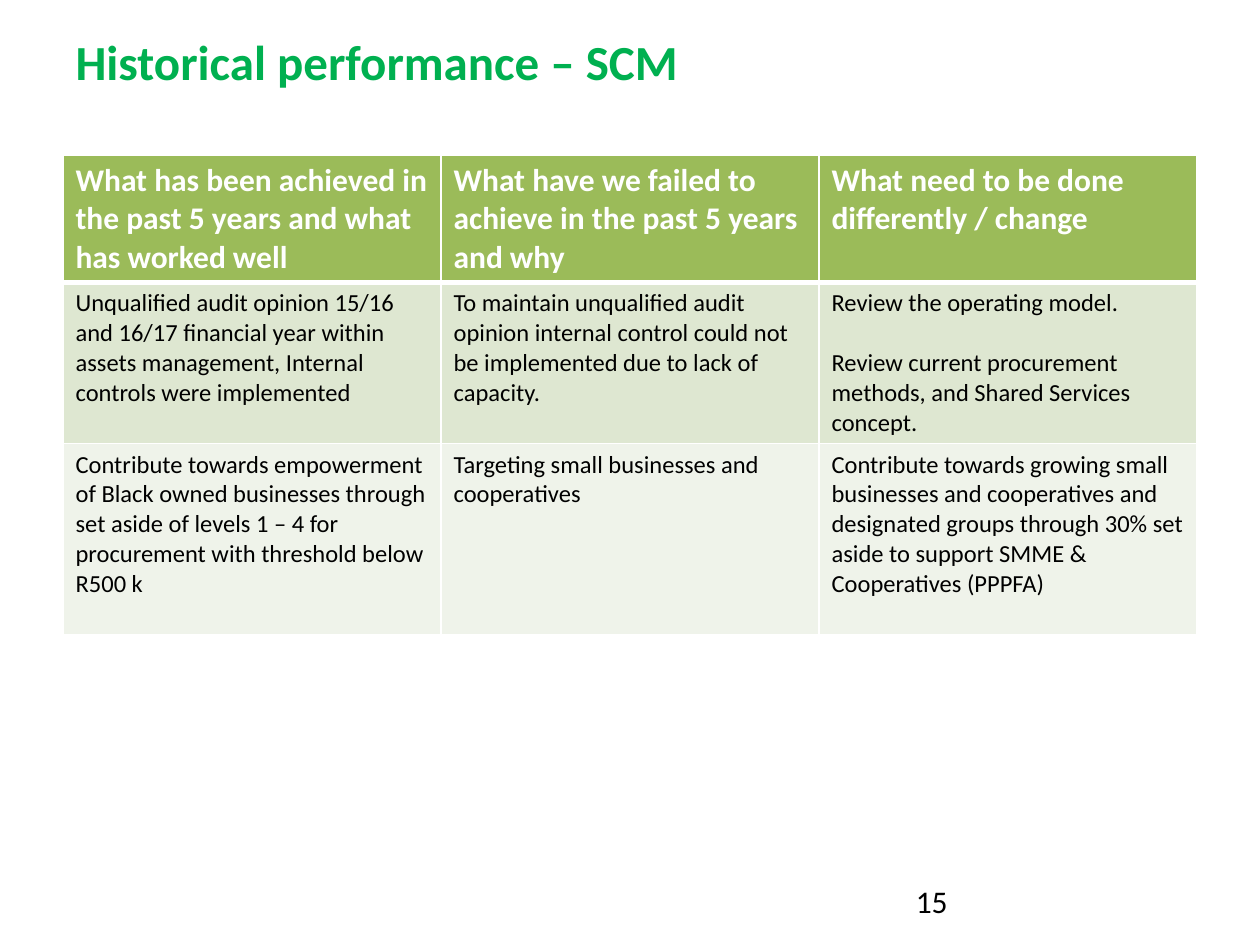
from lxml.etree import SubElement as Sub
from pptx import Presentation
from pptx.dml.color import RGBColor
from pptx.enum.text import MSO_ANCHOR as Anchor, MSO_AUTO_SIZE as Fit, PP_ALIGN as Align
from pptx.oxml.ns import qn
from pptx.util import Inches, Pt

GREEN = RGBColor(0x00, 0xB0, 0x50)
OLIVE = RGBColor(0x9B, 0xBB, 0x59)
SAGE = RGBColor(0xDE, 0xE7, 0xD1)
PALE = RGBColor(0xEF, 0xF3, 0xEA)
WHITE = RGBColor(0xFF, 0xFF, 0xFF)
BLACK = RGBColor(0x00, 0x00, 0x00)

TITLE = dict(size=Pt(28), bold=True, color=GREEN)
HEAD = dict(size=Pt(18), bold=True, color=WHITE)
BODY = dict(size=Pt(14), bold=False, color=BLACK)
PAGE = dict(size=Pt(18), bold=False, color=BLACK)

ROWS = [
    (1.01, OLIVE, HEAD, [
        "What has been achieved in the past 5 years and what has worked well",
        "What have we failed to achieve in the past 5 years and why",
        "What need to be done differently / change"]),
    (1.28, SAGE, BODY, [
        "Unqualified audit opinion 15/16 and 16/17 financial year within assets "
        "management, Internal controls were implemented",
        "To maintain unqualified audit opinion internal control could not be "
        "implemented due to lack of capacity.",
        "Review the operating model.\n"
        "Review current procurement methods, and Shared Services concept."]),
    (1.52, PALE, BODY, [
        "Contribute towards empowerment of Black owned businesses through set aside "
        "of levels 1 – 4 for procurement with threshold below R500 k",
        "Targeting small businesses and cooperatives",
        "Contribute towards growing small businesses and cooperatives and designated "
        "groups through 30% set aside to support SMME & Cooperatives (PPPFA)"]),
]


class Deck:
    """Hold the font and the current slide, and add each kind of element."""

    def __init__(self, face):
        self.face = face
        self.prs = Presentation()
        self.prs.slide_width, self.prs.slide_height = Inches(10), Inches(7.5)
        self.slide = self.prs.slides.add_slide(self.prs.slide_layouts[5])

    def put(self, frame, text, form):
        frame.text = text
        frame.word_wrap = True
        for num, para in enumerate(frame.paragraphs):
            para.alignment = Align.LEFT
            para.space_before = Pt(17 if num else 0)
            para.font.name = self.face
            for key, val in form.items():
                if key == "color":
                    para.font.color.rgb = val
                else:
                    setattr(para.font, key, val)

    def title(self, text, box):
        shape = self.slide.shapes.title
        for key, val in zip(("left", "top", "width", "height"), box):
            setattr(shape, key, Inches(val))
        self.put(shape.text_frame, text, TITLE)
        shape.text_frame.vertical_anchor = Anchor.TOP
        shape.text_frame.auto_size = Fit.SHAPE_TO_FIT_TEXT

    def label(self, text, box, form):
        shape = self.slide.shapes.add_textbox(*map(Inches, box))
        self.put(shape.text_frame, text, form)

    def border(self, cell, sides):
        props = cell._tc.get_or_add_tcPr()
        for side, width in sides.items():
            line = Sub(props, qn(f"a:ln{side}"), w=str(Pt(width)))
            Sub(Sub(line, qn("a:solidFill")), qn("a:srgbClr"), val=str(WHITE))

    def table(self, rows, left, top, width):
        high = sum(row[0] for row in rows)
        box = map(Inches, (left, top, width, high))
        grid = self.slide.shapes.add_table(len(rows), len(rows[0][3]), *box).table
        for r, (tall, fill, form, texts) in enumerate(rows):
            grid.rows[r].height = Inches(tall)
            sides = dict(L=1, R=1, T=3 if r == 1 else 1, B=3 if r == 0 else 1)
            for c, text in enumerate(texts):
                cell = grid.cell(r, c)
                self.border(cell, sides)
                cell.fill.solid()
                cell.fill.fore_color.rgb = fill
                self.put(cell.text_frame, text, form)


def main():
    deck = Deck("Calibri")
    deck.table(ROWS, 0.5, 1.23, 9)
    deck.title("Historical performance – SCM", (0.5, 0.2, 9, 0.57))
    deck.label("15", (7.17, 6.95, 2.33, 0.4), PAGE)
    deck.prs.save("out.pptx")


if __name__ == "__main__":
    main()
